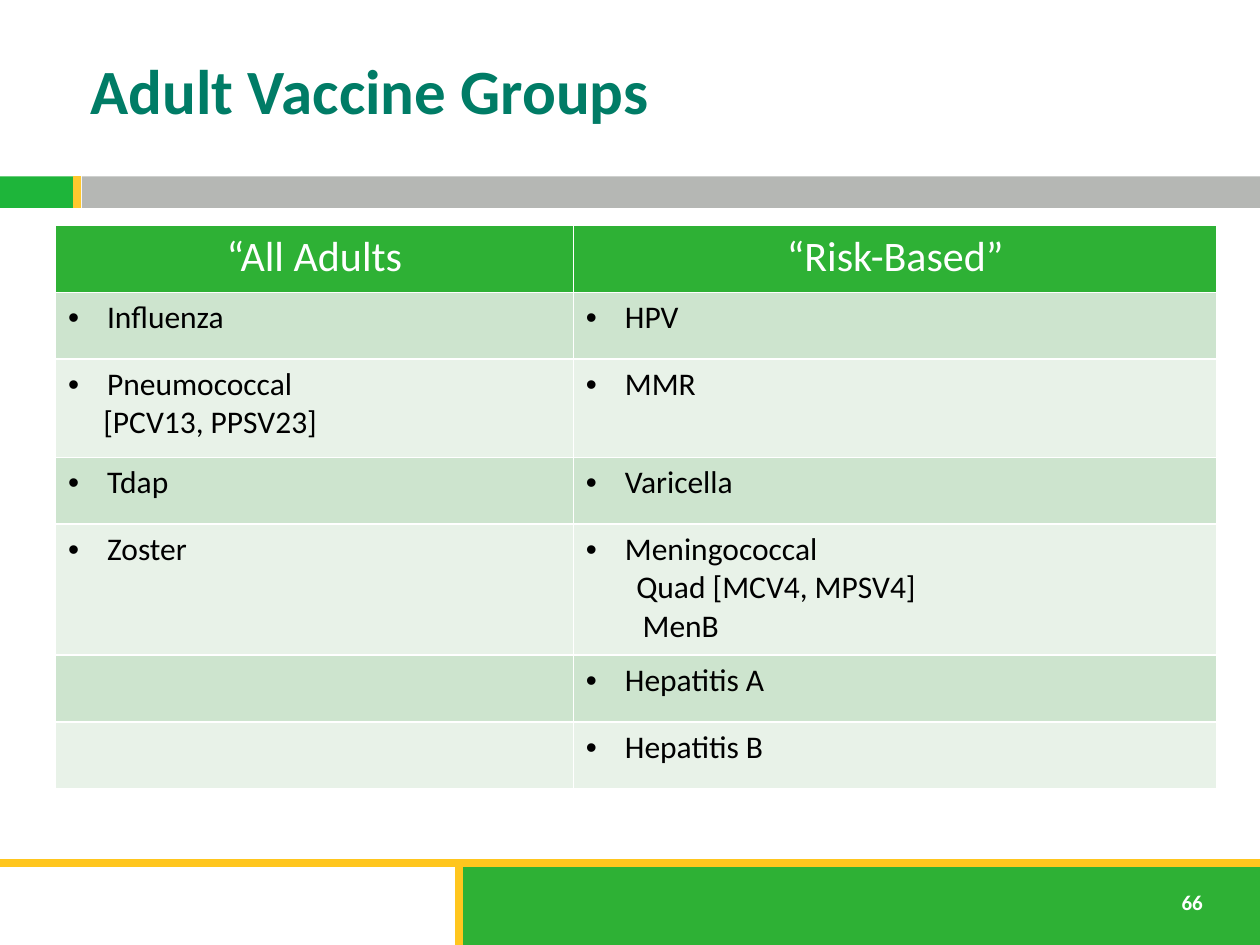
from pptx import Presentation
from pptx.dml.color import RGBColor
from pptx.enum.shapes import MSO_CONNECTOR, MSO_SHAPE
from pptx.enum.text import MSO_ANCHOR, MSO_AUTO_SIZE, PP_ALIGN
from pptx.oxml.ns import qn
from pptx.util import Inches, Pt
from lxml.etree import SubElement

COLORS = {
    "white": "FFFFFF", "black": "000000", "teal": "007C66",
    "accent": "1EB53A", "green": "2EB135", "gray": "B5B7B4",
    "gold": "FFC61E", "amber": "FFC82E", "band": "CDE4CE", "pale": "E8F2E8",
}


def color(name):
    return RGBColor.from_string(COLORS[name])


def add_text(paragraph, text, size, shade, bold=False):
    run = paragraph.add_run()
    run.text = text
    run.font.name = "Calibri"
    run.font.size = Pt(size)
    run.font.bold = bold
    run.font.color.rgb = color(shade)


presentation = Presentation()
presentation.slide_width = Inches(10)
presentation.slide_height = Inches(7.5)
slide = presentation.slides.add_slide(presentation.slide_layouts[5])
slide.background.fill.solid()
slide.background.fill.fore_color.rgb = color("white")

for left, top, width, height, shade in [
    (0, 1.35, 10, 0.35, "white"),
    (0, 1.4, 0.58, 0.25, "accent"),
    (0.65, 1.4, 9.35, 0.25, "gray"),
    (0, 6.81, 10, 0.66, "white"),
    (3.62, 6.84, 6.38, 0.66, "green"),
]:
    bar = slide.shapes.add_shape(
        MSO_SHAPE.RECTANGLE, Inches(left), Inches(top), Inches(width), Inches(height))
    bar.shadow.inherit = False
    bar.fill.solid()
    bar.fill.fore_color.rgb = color(shade)
    bar.line.fill.background()

for x1, y1, x2, y2, shade in [
    (0, 6.85, 10, 6.85, "gold"),
    (3.64, 6.86, 3.64, 7.5, "gold"),
    (0.61, 1.4, 0.61, 1.65, "amber"),
]:
    rule = slide.shapes.add_connector(
        MSO_CONNECTOR.STRAIGHT, Inches(x1), Inches(y1), Inches(x2), Inches(y2))
    rule.line.color.rgb = color(shade)
    rule.line.width = Pt(4.5)
    SubElement(rule._element.spPr, qn("a:effectLst"))

page_number = slide.shapes.add_textbox(Inches(9.28), Inches(7.01), Inches(0.4), Inches(0.3))
page_number.text_frame.word_wrap = False
page_number.text_frame.auto_size = MSO_AUTO_SIZE.SHAPE_TO_FIT_TEXT
add_text(page_number.text_frame.paragraphs[0], "66", 12, "white", True)

title = slide.shapes.title
title.left, title.top = Inches(0.62), Inches(0.21)
title.width, title.height = Inches(6.96), Inches(1)
title.text_frame.vertical_anchor = MSO_ANCHOR.MIDDLE
title.text_frame.paragraphs[0].alignment = PP_ALIGN.LEFT
add_text(title.text_frame.paragraphs[0], "Adult Vaccine Groups", 36, "teal", True)

headings = ["“All Adults", "“Risk-Based”"]
vaccine_rows = [
    (["Influenza"], ["HPV"]),
    (["Pneumococcal", ("[PCV13, PPSV23]", 0.28)], ["MMR"]),
    (["Tdap"], ["Varicella"]),
    (["Zoster"], ["Meningococcal", ("Quad [MCV4, MPSV4]", 0.4), ("MenB", 0.45)]),
    ([], ["Hepatitis A"]),
    ([], ["Hepatitis B"]),
]
column_widths = [4.11, 5.11]
row_heights = [0.53, 0.53, 0.78, 0.53, 1.04, 0.53, 0.53]
vaccines = slide.shapes.add_table(
    len(row_heights), len(column_widths), Inches(0.44), Inches(1.79),
    Inches(sum(column_widths)), Inches(sum(row_heights))).table
for column, width in zip(vaccines.columns, column_widths):
    column.width = Inches(width)
for row, height in zip(vaccines.rows, row_heights):
    row.height = Inches(height)

for column_index, heading in enumerate(headings):
    paragraph = vaccines.cell(0, column_index).text_frame.paragraphs[0]
    paragraph.alignment = PP_ALIGN.CENTER
    add_text(paragraph, heading, 24, "white")

for row_index, groups in enumerate(vaccine_rows, start=1):
    for column_index, entries in enumerate(groups):
        frame = vaccines.cell(row_index, column_index).text_frame
        for position, entry in enumerate(entries):
            paragraph = frame.add_paragraph() if position else frame.paragraphs[0]
            properties = paragraph._p.get_or_add_pPr()
            if position:
                entry, indent = entry
                properties.set("marL", str(Inches(indent)))
            else:
                properties.set("marL", str(Inches(0.31)))
                properties.set("indent", str(Inches(-0.31)))
                SubElement(properties, qn("a:buFont"), typeface="Arial")
                SubElement(properties, qn("a:buChar"), char="•")
            add_text(paragraph, entry, 18, "black")

for row_index, row in enumerate(vaccines.rows):
    shade = "green" if row_index == 0 else "band" if row_index % 2 else "pale"
    for cell in row.cells:
        cell_properties = cell._tc.get_or_add_tcPr()
        for side in ("a:lnL", "a:lnR", "a:lnT", "a:lnB"):
            border = SubElement(cell_properties, qn(side), w=str(Pt(1)))
            border_fill = SubElement(border, qn("a:solidFill"))
            SubElement(border_fill, qn("a:srgbClr"), val=COLORS["white"])
        cell.fill.solid()
        cell.fill.fore_color.rgb = color(shade)

presentation.save("out.pptx")
